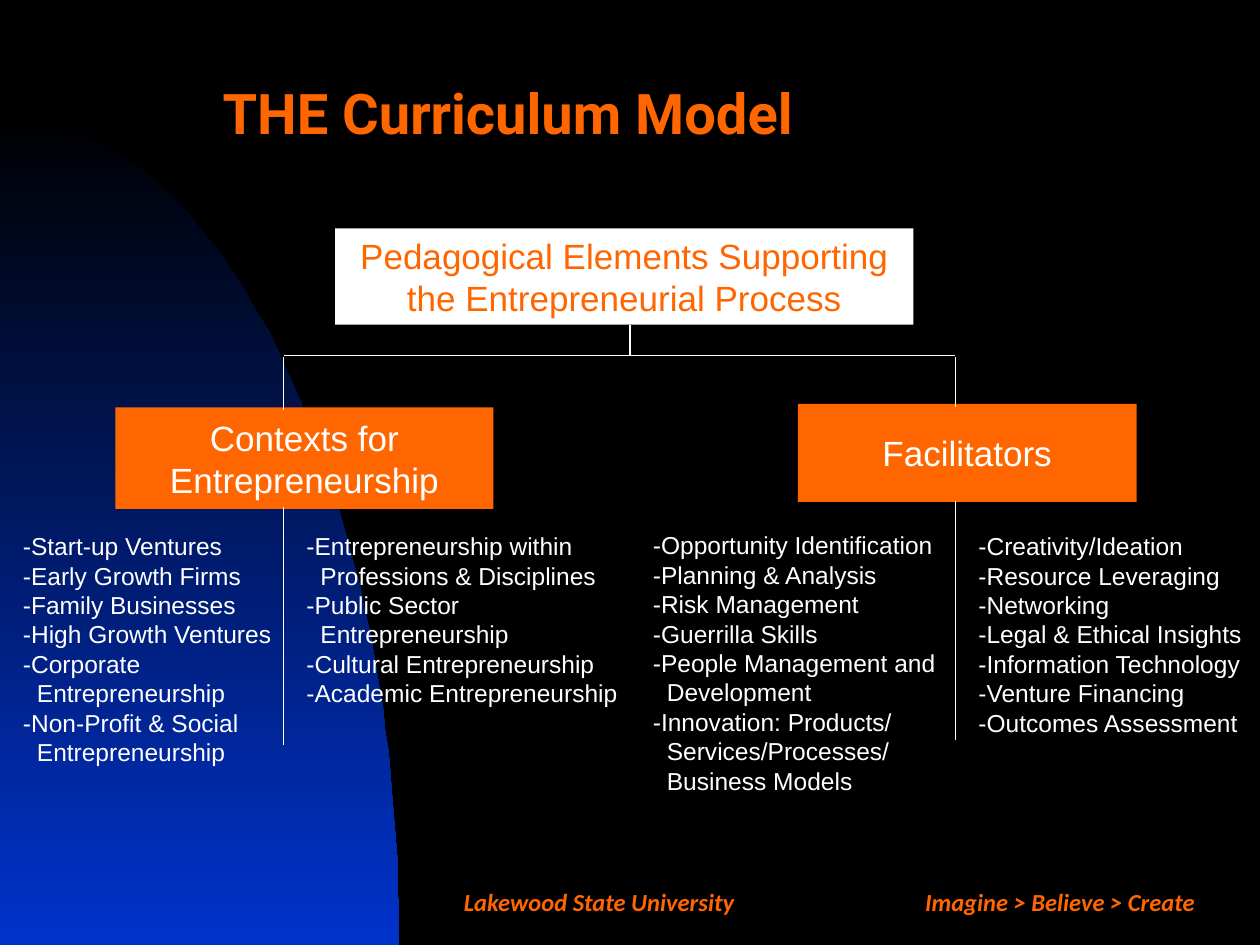
from math import cos, pi, sin

from lxml.etree import SubElement
from pptx import Presentation
from pptx.dml.color import RGBColor
from pptx.enum.shapes import MSO_CONNECTOR, MSO_SHAPE
from pptx.enum.text import MSO_ANCHOR, MSO_AUTO_SIZE, PP_ALIGN
from pptx.oxml.ns import qn
from pptx.util import Pt

BLACK = RGBColor(0x00, 0x00, 0x00)
BLUE = RGBColor(0x00, 0x33, 0xCC)
ORANGE = RGBColor(0xFF, 0x66, 0x00)
WHITE = RGBColor(0xFF, 0xFF, 0xFF)

TITLE = "THE Curriculum Model"
FOOTER = "Lakewood State University\tImagine > Believe > Create"
FOOTER_TAB = 263.5

# text, (left, top, width, height), fill, font colour
BOXES = [
    ("Pedagogical Elements Supporting the Entrepreneurial Process",
     (191.5, 130.5, 330.5, 55), WHITE, ORANGE),
    ("Contexts for Entrepreneurship", (66, 232.8, 216, 58), ORANGE, WHITE),
    ("Facilitators", (456, 230.8, 193.5, 56), ORANGE, WHITE),
]

# (left, top, width, height), items
COLUMNS = [
    ((6, 300, 168, 158), [
        "-Start-up Ventures", "-Early Growth Firms", "-Family Businesses",
        "-High Growth Ventures", "-Corporate\vEntrepreneurship",
        "-Non-Profit & Social\vEntrepreneurship"]),
    ((168, 300, 204, 108), [
        "-Entrepreneurship within\vProfessions & Disciplines",
        "-Public Sector\vEntrepreneurship",
        "-Cultural Entrepreneurship", "-Academic Entrepreneurship"]),
    ((366, 299.5, 180, 194), [
        "-Opportunity Identification", "-Planning & Analysis",
        "-Risk Management", "-Guerrilla Skills",
        "-People Management and\vDevelopment",
        "-Innovation: Products/\vServices/Processes/\vBusiness Models"]),
    ((552, 300, 176, 125), [
        "-Creativity/Ideation", "-Resource Leveraging", "-Networking",
        "-Legal & Ethical Insights", "-Information Technology",
        "-Venture Financing", "-Outcomes Assessment"]),
]
HANGING = 8

# Tree of lines: the trunk, the crossbar and two branches
LEFT_X, TRUNK_X, RIGHT_X, BAR_Y = 162, 360, 546, 203
LINES = [
    (TRUNK_X, 186, TRUNK_X, BAR_Y),
    (LEFT_X, BAR_Y, RIGHT_X, BAR_Y),
    (LEFT_X, 204, LEFT_X, 234),
    (RIGHT_X, 204, RIGHT_X, 232.5),
    (LEFT_X, 289.5, LEFT_X, 426),
    (RIGHT_X, 286.5, RIGHT_X, 423),
]

SLIDE_W, SLIDE_H = 720, 540
ARC_W, ARC_H, ARC_STEPS = 228, 474, 60


def style(paragraph, name, size, color, bold=False, italic=False):
    font = paragraph.font
    font.name, font.size, font.bold, font.italic = name, Pt(size), bold, italic
    font.color.rgb = color


def place(box):
    return [Pt(length) for length in box]


def add_arc(shapes):
    """Quarter ellipse rising from the lower left corner."""
    angles = [pi / 2 * step / ARC_STEPS for step in range(ARC_STEPS + 1)]
    curve = [(ARC_W * sin(a), SLIDE_H - ARC_H * cos(a)) for a in angles]
    builder = shapes.build_freeform(*curve[0], scale=Pt(1))
    builder.add_line_segments(curve[1:] + [(0, SLIDE_H)], close=True)
    arc = builder.convert_to_shape()
    arc.shadow.inherit = False
    arc.line.fill.background()
    arc.fill.gradient()
    arc.fill.gradient_angle = 270
    for stop, color, position in zip(arc.fill.gradient_stops, (BLACK, BLUE), (0, 1)):
        stop.color.rgb = color
        stop.position = position


def add_title(title):
    title.left, title.top, title.width, title.height = place((120, 24, 564, 90))
    frame = title.text_frame
    frame.text = TITLE
    frame.vertical_anchor = MSO_ANCHOR.MIDDLE
    frame.auto_size = MSO_AUTO_SIZE.NONE
    heading = frame.paragraphs[0]
    heading.alignment = PP_ALIGN.LEFT
    heading.line_spacing = 0.7
    style(heading, "Roboto", 32, ORANGE, bold=True)


def add_box(shapes, text, box, fill, color):
    panel = shapes.add_shape(MSO_SHAPE.RECTANGLE, *place(box))
    panel.shadow.inherit = False
    panel.fill.solid()
    panel.fill.fore_color.rgb = fill
    panel.line.fill.background()
    frame = panel.text_frame
    frame.word_wrap = True
    frame.vertical_anchor = MSO_ANCHOR.MIDDLE
    frame.text = text
    frame.paragraphs[0].alignment = PP_ALIGN.CENTER
    style(frame.paragraphs[0], "Arial", 20, color)


def add_column(shapes, box, items):
    frame = shapes.add_textbox(*place(box)).text_frame
    frame.word_wrap = True
    for index, item in enumerate(items):
        paragraph = frame.add_paragraph() if index else frame.paragraphs[0]
        paragraph.text = item
        style(paragraph, "Arial", 14, WHITE)
        properties = paragraph._p.get_or_add_pPr()
        properties.set("marL", str(Pt(HANGING)))
        properties.set("indent", str(-Pt(HANGING)))


def add_line(shapes, ends):
    line = shapes.add_connector(MSO_CONNECTOR.STRAIGHT, *place(ends))
    line.line.color.rgb = WHITE
    line.line.width = Pt(0.75)
    SubElement(line._element.spPr, qn("a:effectLst"))


def add_footer(shapes):
    frame = shapes.add_textbox(*place((258, 500.5, 462, 29))).text_frame
    frame.word_wrap = True
    frame.vertical_anchor = MSO_ANCHOR.MIDDLE
    paragraph = frame.paragraphs[0]
    paragraph.text = FOOTER
    tabs = SubElement(paragraph._p.get_or_add_pPr(), qn("a:tabLst"))
    SubElement(tabs, qn("a:tab"), pos=str(Pt(FOOTER_TAB)), algn="l")
    style(paragraph, "Calibri", 14, ORANGE, bold=True, italic=True)


def main():
    deck = Presentation()
    deck.slide_width, deck.slide_height = Pt(SLIDE_W), Pt(SLIDE_H)
    slide = deck.slides.add_slide(deck.slide_layouts[5])
    slide.background.fill.solid()
    slide.background.fill.fore_color.rgb = BLACK
    shapes = slide.shapes
    add_arc(shapes)
    add_title(shapes.title)
    for box in BOXES:
        add_box(shapes, *box)
    for column in COLUMNS:
        add_column(shapes, *column)
    for ends in LINES:
        add_line(shapes, ends)
    add_footer(shapes)
    # The title is made first, so it moves in front of the arc
    tree = shapes.title._element.getparent()
    tree.insert(tree.index(shapes.title._element) + 1, shapes.title._element)
    deck.save("out.pptx")


if __name__ == "__main__":
    main()
